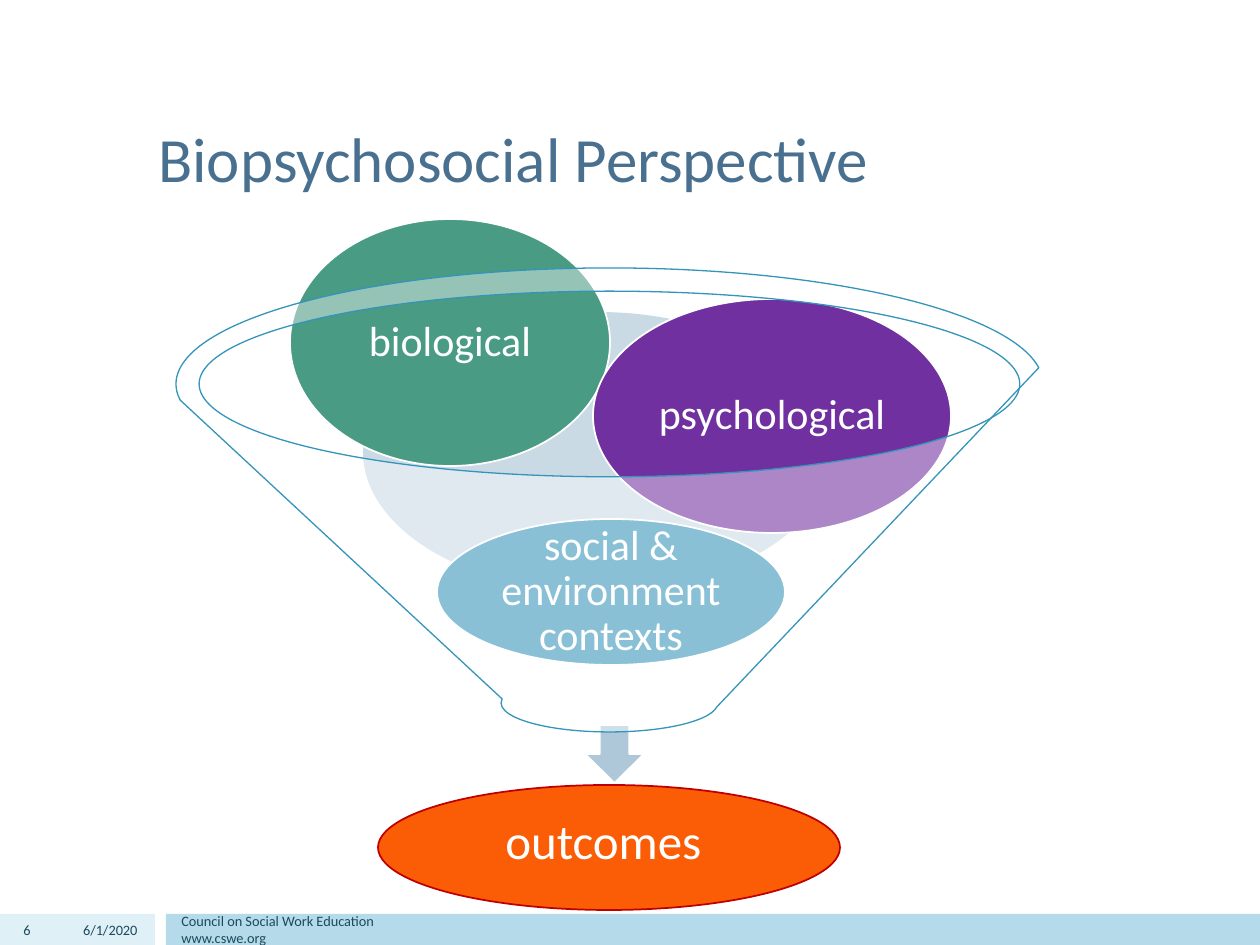
from pptx import Presentation
from pptx.dml.color import RGBColor
from pptx.enum.shapes import MSO_SHAPE
from pptx.enum.text import MSO_ANCHOR, PP_ALIGN
from pptx.oxml.ns import qn
from pptx.util import Emu, Pt
from lxml.etree import SubElement

EMU_PER_PX = 914400 / 126
FONT = "Calibri"
COLORS = {
    "white": "FFFFFF", "title": "4A7090", "footer_text": "1A4A5D",
    "footer_light": "DFF0F6", "footer": "B5DBEA", "backdrop": "BFD2E0",
    "arrow": "AEC8D9", "social": "3494BA", "biological": "4A9B83",
    "psychological": "7030A0", "outcomes": "FA5D06", "outcomes_line": "C00000",
}
FOOTER_TOP, FOOTER_HEIGHT = 914, 31
FACTORS = [
    ("social & environment contexts", (437, 519, 348, 146), "social"),
    ("biological", (290, 219, 320, 247), "biological"),
    ("psychological", (593, 299, 358, 234), "psychological"),
]
FOOTER_TEXTS = [
    ("6", 0, 43, PP_ALIGN.RIGHT),
    ("6/1/2020", 47, 103, PP_ALIGN.RIGHT),
    ("Council on Social Work Education\vwww.cswe.org", 169, 945, PP_ALIGN.LEFT),
]


def px(value):
    return Emu(round(value * EMU_PER_PX))


def color(name):
    return RGBColor.from_string(COLORS[name])


def set_attributes(target, values):
    for name, value in values.items():
        setattr(target, name, value)


def write_text(shape, text, size, color_name, align=PP_ALIGN.LEFT,
               anchor=MSO_ANCHOR.MIDDLE, **paragraph_format):
    frame = shape.text_frame
    set_attributes(frame, {"word_wrap": True, "vertical_anchor": anchor})
    paragraph = frame.paragraphs[0]
    paragraph.text = text
    set_attributes(paragraph, {"alignment": align, **paragraph_format})
    set_attributes(paragraph.font, {"name": FONT, "size": Pt(size)})
    paragraph.font.color.rgb = color(color_name)


def add_text(slide, box, *args, **options):
    shape = slide.shapes.add_textbox(*map(px, box))
    write_text(shape, *args, **options)


def add_figure(slide, kind, box, fill, line=None, width=1, opacity=100):
    """Add a preset shape; opacity is a percentage of its fill."""
    shape = slide.shapes.add_shape(kind, *map(px, box))
    shape.shadow.inherit = False
    shape.fill.solid()
    shape.fill.fore_color.rgb = color(fill)
    if opacity < 100:
        fill_color = shape.fill._xPr.find(qn("a:solidFill"))[0]
        SubElement(fill_color, qn("a:alpha"), val=str(opacity * 1000))
    if line:
        shape.line.color.rgb = color(line)
        shape.line.width = Pt(width)
    else:
        shape.line.fill.background()
    return shape


def add_factor(slide, text, box, fill):
    oval = add_figure(slide, MSO_SHAPE.OVAL, box, fill, "white")
    margins = ("margin_left", "margin_top", "margin_right", "margin_bottom")
    set_attributes(oval.text_frame, dict.fromkeys(margins, px(4)))
    write_text(oval, text, 24, "white", PP_ALIGN.CENTER, line_spacing=0.9)


def add_footer(slide):
    for left, width, fill in ((0, 155, "footer_light"), (166, 1094, "footer")):
        add_figure(slide, MSO_SHAPE.RECTANGLE,
                   (left, FOOTER_TOP, width, FOOTER_HEIGHT), fill)
    for text, left, width, align in FOOTER_TEXTS:
        add_text(slide, (left, FOOTER_TOP, width, FOOTER_HEIGHT),
                 text, 8.2, "footer_text", align)


def add_funnel(slide):
    add_figure(slide, MSO_SHAPE.OVAL, (363, 312, 469, 280), "backdrop", opacity=82)
    add_figure(slide, MSO_SHAPE.DOWN_ARROW, (585, 725, 59, 58), "arrow", "white")
    for text, box, fill in FACTORS:
        add_factor(slide, text, box, fill)
    add_figure(slide, MSO_SHAPE.FUNNEL, (176, 268, 867, 464), "white",
               "social", width=0.75, opacity=42)


def add_outcomes(slide):
    add_figure(slide, MSO_SHAPE.FLOWCHART_CONNECTOR, (378, 785, 462, 125),
               "outcomes", "outcomes_line")
    add_text(slide, (493, 804, 234, 72), "outcomes", 28, "white",
             anchor=MSO_ANCHOR.TOP)


def main():
    presentation = Presentation()
    set_attributes(presentation, {"slide_width": px(1260), "slide_height": px(945)})
    slide = presentation.slides.add_slide(presentation.slide_layouts[6])
    add_footer(slide)
    add_text(slide, (146, 38, 969, 163), "Biopsychosocial Perspective", 36,
             "title", anchor=MSO_ANCHOR.BOTTOM)
    add_funnel(slide)
    add_outcomes(slide)
    presentation.save("out.pptx")


if __name__ == "__main__":
    main()
